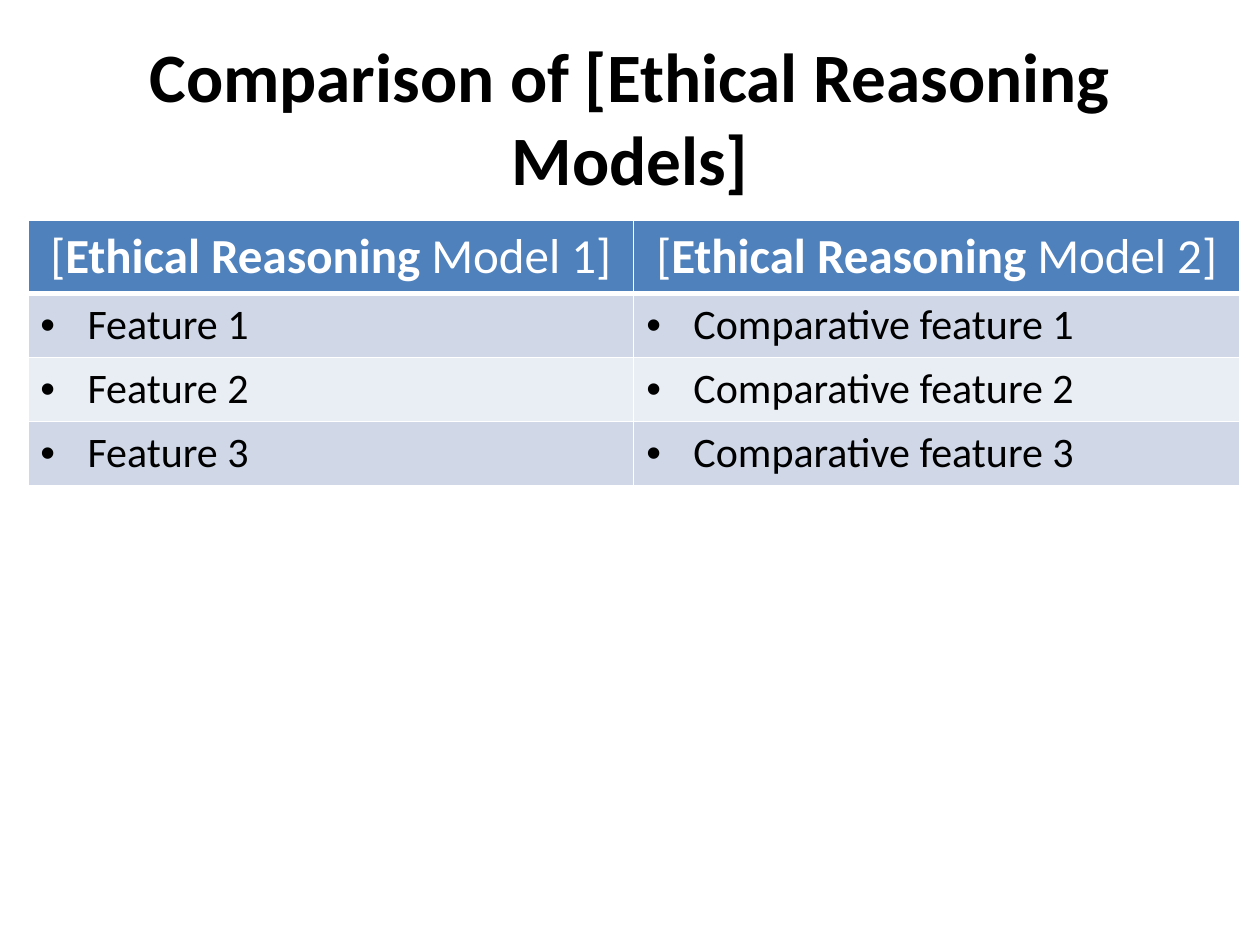
from lxml.etree import SubElement
from pptx import Presentation
from pptx.dml.color import RGBColor
from pptx.enum.text import MSO_ANCHOR, MSO_AUTO_SIZE, PP_ALIGN
from pptx.oxml.ns import qn
from pptx.util import Cm, Pt

WHITE = RGBColor(0xFF, 0xFF, 0xFF)
BLACK = RGBColor(0x00, 0x00, 0x00)
HEADER_BLUE = RGBColor(0x4F, 0x81, 0xBD)
BAND_FILLS = (RGBColor(0xD0, 0xD8, 0xE8), RGBColor(0xE9, 0xED, 0xF4))

TITLE_FONT = {"name": "Calibri", "size": Pt(39.6), "bold": True}
HEADER_FONT = {"name": "Calibri", "size": Pt(28)}
FEATURE_FONT = {"name": "Calibri", "size": Pt(24), "bold": False}

HEADER_HEIGHT, FEATURE_HEIGHT = Cm(1.46), Cm(1.29)
TITLE_BOX = (Cm(1.27), Cm(0.76), Cm(22.86), Cm(3.18))
TABLE_BOX = (Cm(0.56), Cm(4.45), Cm(24.43), HEADER_HEIGHT + 3 * FEATURE_HEIGHT)

MODELS = ("Model 1]", "Model 2]")
FEATURES = [(f"Feature {n}", f"Comparative feature {n}") for n in (1, 2, 3)]


def set_values(target, values):
    for name, value in values.items():
        setattr(target, name, value)


def add_span(para, text, font, color):
    span = para.add_run()
    span.text = text
    set_values(span.font, font)
    span.font.color.rgb = color


def add_bullet(para):
    """Give the paragraph a round bullet with a hanging indent."""
    properties = para._p.get_or_add_pPr()
    indent = Cm(0.95)
    properties.set("marL", str(indent))
    properties.set("indent", str(-indent))
    SubElement(properties, qn("a:buFont")).set("typeface", "Arial")
    SubElement(properties, qn("a:buChar")).set("char", "•")


def format_cell(cell, fill, bottom_width=1):
    """Draw white borders, then the fill, as the schema orders them."""
    properties = cell._tc.get_or_add_tcPr()
    widths = {"a:lnL": 1, "a:lnR": 1, "a:lnT": 1, "a:lnB": bottom_width}
    for tag, width in widths.items():
        line = SubElement(properties, qn(tag), w=str(Pt(width)))
        color = SubElement(SubElement(line, qn("a:solidFill")), qn("a:srgbClr"))
        color.set("val", str(WHITE))
    cell.fill.solid()
    cell.fill.fore_color.rgb = fill


def place_title(page, box, text):
    title = page.shapes.title
    set_values(title, dict(zip(("left", "top", "width", "height"), box)))
    set_values(title.text_frame, {
        "word_wrap": True,
        "auto_size": MSO_AUTO_SIZE.NONE,
        "vertical_anchor": MSO_ANCHOR.MIDDLE,
    })
    para = title.text_frame.paragraphs[0]
    para.alignment = PP_ALIGN.CENTER
    add_span(para, text, TITLE_FONT, BLACK)


def fill_header(cell, model):
    format_cell(cell, HEADER_BLUE, bottom_width=3)
    para = cell.text_frame.paragraphs[0]
    para.alignment = PP_ALIGN.CENTER
    for text, bold in (("[", False), ("Ethical Reasoning ", True), (model, False)):
        add_span(para, text, {**HEADER_FONT, "bold": bold}, WHITE)


def fill_feature(cell, text, fill):
    format_cell(cell, fill)
    para = cell.text_frame.paragraphs[0]
    add_bullet(para)
    add_span(para, text, FEATURE_FONT, BLACK)


def place_comparison(page, box):
    frame = page.shapes.add_table(len(FEATURES) + 1, len(MODELS), *box)
    table = frame.table
    for row_index, row in enumerate(table.rows):
        row.height = FEATURE_HEIGHT if row_index else HEADER_HEIGHT
    for column, model in enumerate(MODELS):
        fill_header(table.cell(0, column), model)
    for index, features in enumerate(FEATURES):
        for column, text in enumerate(features):
            fill_feature(table.cell(index + 1, column), text, BAND_FILLS[index % 2])


def main():
    deck = Presentation()
    set_values(deck, {"slide_width": Cm(25.4), "slide_height": Cm(19.05)})
    page = deck.slides.add_slide(deck.slide_layouts.get_by_name("Title Only"))
    place_comparison(page, TABLE_BOX)
    place_title(page, TITLE_BOX, "Comparison of [Ethical Reasoning Models]")
    deck.save("out.pptx")


if __name__ == "__main__":
    main()
